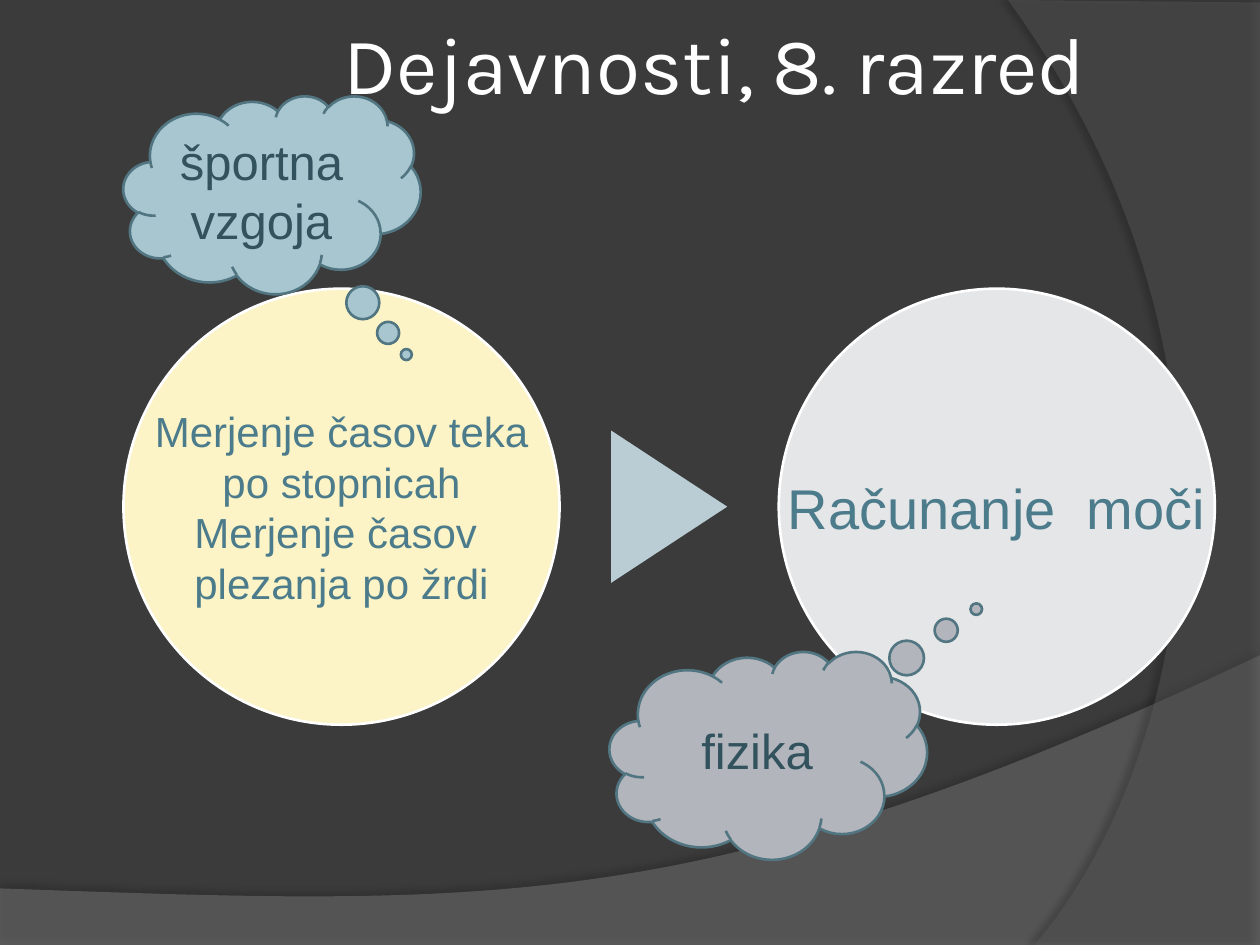
from lxml import etree
from pptx import Presentation
from pptx.dml.color import RGBColor
from pptx.enum.shapes import MSO_SHAPE
from pptx.enum.text import MSO_ANCHOR, PP_ALIGN
from pptx.oxml.ns import qn
from pptx.util import Cm, Pt

OVAL = MSO_SHAPE.OVAL
CLOUD = MSO_SHAPE.CLOUD_CALLOUT
ARROW = MSO_SHAPE.ISOSCELES_TRIANGLE
MIDDLE = MSO_ANCHOR.MIDDLE
CENTER = PP_ALIGN.CENTER

BLACK = RGBColor(0x00, 0x00, 0x00)
WHITE = RGBColor(0xFF, 0xFF, 0xFF)
DARK = RGBColor(0x3B, 0x3B, 0x3B)
WAVE = RGBColor(0x7F, 0x7F, 0x7F)
ARC = RGBColor(0x5E, 0x5E, 0x5E)
CREAM = RGBColor(0xFC, 0xF4, 0xC7)
PALE = RGBColor(0xE5, 0xE6, 0xE8)
MIST = RGBColor(0xBA, 0xCD, 0xD4)
BLUE = RGBColor(0xA8, 0xC6, 0xD0)
GRAY = RGBColor(0xB2, 0xB5, 0xBB)
EDGE = RGBColor(0x51, 0x76, 0x82)
TEAL = RGBColor(0x4C, 0x7C, 0x8B)
DEEP = RGBColor(0x32, 0x52, 0x5D)

WIDTH, HEIGHT = 25.4, 19.05


def paint(shape, fill, line=None):
    shape.shadow.inherit = False
    shape.fill.solid()
    shape.fill.fore_color.rgb = fill
    if line is None:
        shape.line.fill.background()
    else:
        shape.line.color.rgb = line
        shape.line.width = Pt(1.5)


def write(shape, text, size, color, font="Arial", inset=None):
    frame = shape.text_frame
    frame.word_wrap = True
    frame.vertical_anchor = MIDDLE
    if inset is not None:
        frame.margin_left = frame.margin_right = Cm(inset)
        frame.margin_top = frame.margin_bottom = Cm(inset)
    frame.text = text
    for para in frame.paragraphs:
        para.alignment = CENTER
        for run in para.runs:
            run.font.name = font
            run.font.size = Pt(size)
            run.font.color.rgb = color


def label(slide, box, text, size, color, font="Arial", inset=0.1):
    area = slide.shapes.add_textbox(*map(Cm, box))
    write(area, text, size, color, font, inset)


def add_alpha(color, percent):
    etree.SubElement(color, qn("a:alpha"), val=str(percent * 1000))


def curve(a, b, c, d, steps=60):
    """Points along a cubic curve from a to d."""
    points = []
    for i in range(steps + 1):
        t = i / steps
        u = 1 - t
        points.append(tuple(
            u**3 * p + 3 * u * u * t * q + 3 * u * t * t * r + t**3 * s
            for p, q, r, s in zip(a, b, c, d)))
    return points


def band(slide, points, fill, alpha, dark, dist, angle):
    """Translucent outline with a soft outer shadow."""
    points = [(Cm(x), Cm(y)) for x, y in points]
    build = slide.shapes.build_freeform(*points[0])
    build.add_line_segments(points[1:], close=True)
    shape = build.convert_to_shape()
    paint(shape, fill)
    props = shape.fill._xPr
    add_alpha(props.find(qn("a:solidFill"))[0], alpha)
    glow = etree.SubElement(
        props.find(qn("a:effectLst")), qn("a:outerShdw"),
        blurRad=str(Pt(4)), dist=str(Pt(dist)), dir=str(angle * 60000),
        algn="ctr", rotWithShape="0")
    add_alpha(etree.SubElement(glow, qn("a:srgbClr"), val=str(BLACK)), dark)


def backdrop(slide):
    slide.background.fill.solid()
    slide.background.fill.fore_color.rgb = DARK
    # Wave along the bottom
    edge = curve((WIDTH, 13.21), (14.2, 18.52), (9.93, 18.26), (0, 17.91))
    band(slide, edge + [(0, HEIGHT), (WIDTH, HEIGHT)], WAVE, 45, 35, 3.5, 270)
    # Arc down the right side
    edge = curve((20.85, HEIGHT), (23.75, 15.72), (25.86, 7.62), (20.32, 0))
    band(slide, edge + [(WIDTH, 0.05), (WIDTH, HEIGHT)], ARC, 40, 45, 4, 180)


def circle(slide, left, top, side, fill, text, size):
    box = (left, top, side, side)
    disc = slide.shapes.add_shape(OVAL, *map(Cm, box))
    paint(disc, fill, WHITE)
    label(slide, box, text, size, TEAL)


def process(slide, left, top, width, side):
    """Two circles at the ends of the box, an arrow between them."""
    circle(slide, left, top, side, CREAM,
           "Merjenje časov teka po stopnicah\nMerjenje časov  plezanja po žrdi",
           24)
    wide, high = 3.07, 2.34
    arrow = slide.shapes.add_shape(
        ARROW, Cm(left + (width - wide) / 2), Cm(top + (side - high) / 2),
        Cm(wide), Cm(high))
    arrow.rotation = 90
    paint(arrow, MIST)
    circle(slide, left + width - side, top, side, PALE, "Računanje  moči", 32)


def cloud(slide, box, tail, fill, text):
    shape = slide.shapes.add_shape(CLOUD, *map(Cm, box))
    for i, value in enumerate(tail):
        shape.adjustments[i] = value
    paint(shape, fill, EDGE)
    write(shape, text, 28, DEEP)


def main():
    deck = Presentation()
    deck.slide_width, deck.slide_height = Cm(WIDTH), Cm(HEIGHT)
    slide = deck.slides.add_slide(deck.slide_layouts[6])
    backdrop(slide)
    label(slide, (3.99, 0, 20.83, 2.51), "Dejavnosti, 8. razred", 46, WHITE,
          "Karla", 0.13)
    process(slide, 2.49, 5.82, 22, 8.79)
    # School subjects
    cloud(slide, (12.29, 13.13, 6.4, 4.19), (0.655, -0.703), GRAY, "fizika")
    cloud(slide, (2.49, 1.93, 5.99, 3.99), (0.452, 0.808), BLUE,
          "športna vzgoja")
    deck.save("out.pptx")


if __name__ == "__main__":
    main()
